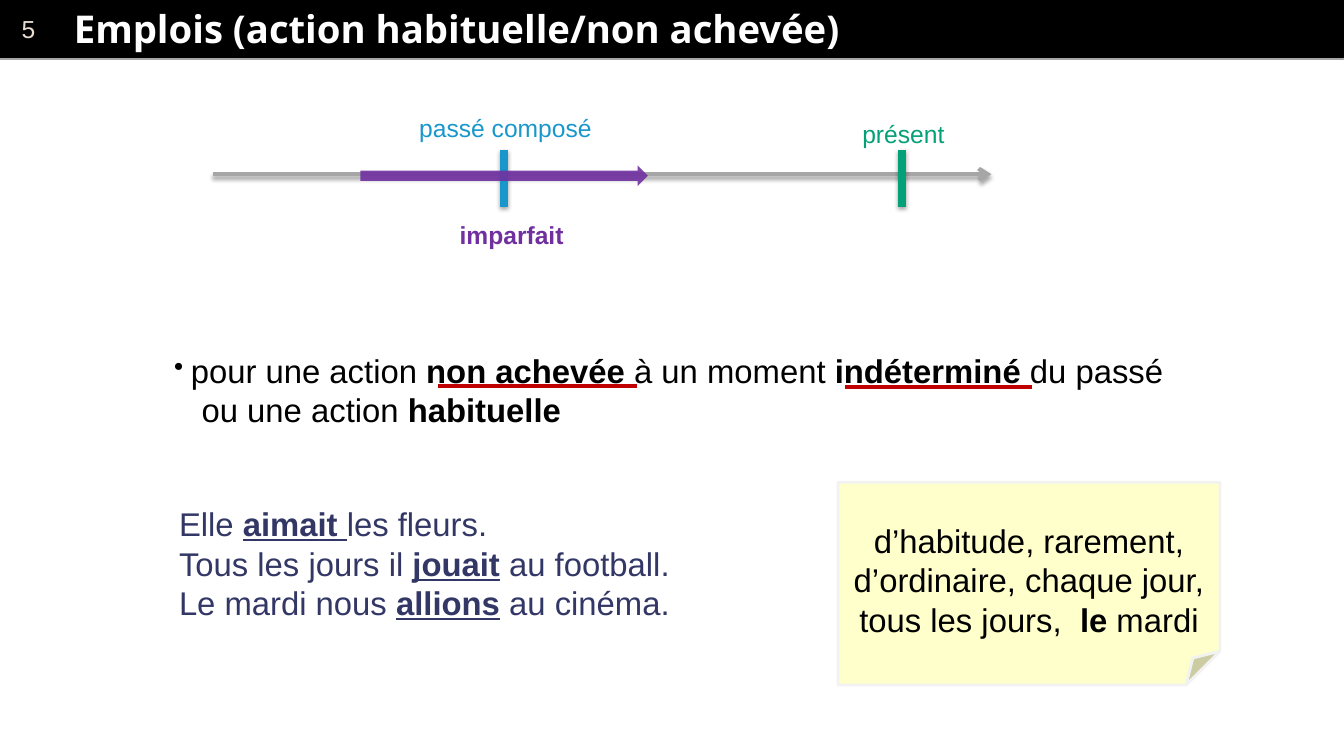
from lxml.etree import SubElement
from pptx import Presentation
from pptx.dml.color import RGBColor
from pptx.enum.shapes import MSO_CONNECTOR, MSO_SHAPE
from pptx.enum.text import MSO_ANCHOR, PP_ALIGN
from pptx.oxml.ns import qn
from pptx.util import Inches, Pt

BLACK = RGBColor(0x00, 0x00, 0x00)
WHITE = RGBColor(0xFF, 0xFF, 0xFF)
GRAY = RGBColor(0xA6, 0xA6, 0xA6)
SAND = RGBColor(0xE7, 0xDE, 0xD1)
GREEN = RGBColor(0x04, 0xA0, 0x78)
BLUE = RGBColor(0x19, 0x97, 0xCB)
PURPLE = RGBColor(0x70, 0x30, 0xA0)
RED = RGBColor(0xC0, 0x00, 0x00)
NAVY = RGBColor(0x33, 0x37, 0x66)
YELLOW = RGBColor(0xFF, 0xFF, 0xCC)
PALE = RGBColor(0xF2, 0xF2, 0xF2)

PAGE_NUMBER = [[("5", "")]]
TITLE = [[("Emplois (action habituelle/non achevée)", "b")]]
RULE = [
    [("pour une action ", ""), ("non achevée ", "b"), ("à un moment ", ""),
     ("indéterminé", "b"), (" du passé", "")],
    [("ou une action ", ""), ("habituelle", "b")],
]
EXAMPLES = [
    [("Elle ", ""), ("aimait ", "bu"), ("les fleurs.", "")],
    [("Tous les jours il ", ""), ("jouait", "bu"), (" au football.", "")],
    [("Le mardi nous ", ""), ("allions", "bu"), (" au cinéma.", "")],
]
ADVERBS = [
    [("d’habitude, rarement,", "")],
    [("d’ordinaire, chaque jour, tous les jours,  ", ""), ("le", "b"), (" mardi", "")],
]
TENSE_LABELS = [
    ("présent", "", (8.66, 1.16, 1.04, 0.4), GREEN),
    ("passé composé", "", (4.16, 1.1, 1.97, 0.4), BLUE),
    ("imparfait", "b", (4.57, 2.18, 1.27, 0.4), PURPLE),
]
TENSE_MARKS = [(9.16, GREEN), (5.12, BLUE)]
UNDERLINES = [(4.45, 6.47, 3.92), (8.58, 10.48, 3.93)]

deck = Presentation()
deck.slide_width, deck.slide_height = Inches(13.65), Inches(7.68)
page = deck.slides.add_slide(deck.slide_layouts[6])


def write(shape, lines, size, color, font="Arial", align=PP_ALIGN.LEFT,
          anchor=MSO_ANCHOR.TOP, wrap=True):
    frame = shape.text_frame
    frame.word_wrap = wrap
    frame.vertical_anchor = anchor
    for index, line in enumerate(lines):
        para = frame.add_paragraph() if index else frame.paragraphs[0]
        para.alignment = align
        for text, style in line:
            span = para.add_run()
            span.text = text
            if "b" in style:
                span.font.bold = True
            if "u" in style:
                span.font.underline = True
        para.font.name = font
        para.font.size = Pt(size)
        para.font.color.rgb = color
    return frame


def add_text(place, lines, size, color, **options):
    box = page.shapes.add_textbox(*map(Inches, place))
    return write(box, lines, size, color, **options)


def add_block(kind, place, fill, line=None, width=1):
    block = page.shapes.add_shape(kind, *map(Inches, place))
    block.shadow.inherit = False
    block.fill.solid()
    block.fill.fore_color.rgb = fill
    if line is None:
        block.line.fill.background()
    else:
        block.line.color.rgb = line
        block.line.width = Pt(width)
    return block


def add_line(x1, y1, x2, y2, color, width, shadow=False, arrow=False):
    line = page.shapes.add_connector(MSO_CONNECTOR.STRAIGHT, *map(Inches, (x1, y1, x2, y2)))
    line.line.color.rgb = color
    line.line.width = Pt(width)
    if arrow:
        SubElement(line.line._get_or_add_ln(), qn("a:tailEnd"), type="arrow")
    effects = SubElement(line._element.spPr, qn("a:effectLst"))
    if shadow:
        outer = SubElement(effects, qn("a:outerShdw"), blurRad=str(Pt(3.1)),
                           dist=str(Pt(1.8)), dir="5400000", rotWithShape="0")
        tint = SubElement(outer, qn("a:srgbClr"), val=str(BLACK))
        SubElement(tint, qn("a:alpha"), val="35000")


def indent(para, left, first=0):
    properties = para._p.get_or_add_pPr()
    properties.set("marL", str(Inches(left)))
    properties.set("indent", str(Inches(first)))
    return properties


banner = add_block(MSO_SHAPE.RECTANGLE, (0, 0, 13.65, 0.58), BLACK, BLACK, 0.75)
number = write(banner, PAGE_NUMBER, 18, SAND, anchor=MSO_ANCHOR.MIDDLE)
indent(number.paragraphs[0], 0.12)
add_line(0, 0.6, 13.65, 0.6, GRAY, 2)
title = add_text((0.61, 0.01, 12.85, 0.56), TITLE, 28, WHITE, font="Open Sans",
                 anchor=MSO_ANCHOR.MIDDLE)
title.margin_left = Inches(0.14)
title.margin_top = title.margin_bottom = Inches(0.04)

add_line(2.16, 1.77, 10.07, 1.77, GRAY, 3, shadow=True, arrow=True)
for x, color in TENSE_MARKS:
    add_line(x, 1.52, x, 2.1, color, 6, shadow=True)
duration = add_block(MSO_SHAPE.RIGHT_ARROW, (3.66, 1.68, 2.92, 0.21), PURPLE)
for tint in duration._element.spPr.find(qn("a:solidFill")):
    SubElement(tint, qn("a:alpha"), val="90000")
for text, style, place, color in TENSE_LABELS:
    add_text(place, [[(text, style)]], 18, color, wrap=False)

rule = add_text((1.67, 3.51, 11.8, 0.91), RULE, 24, BLACK)
first, second = rule.paragraphs
bulleted = indent(first, 0.17, -0.17)
bullet = SubElement(bulleted, qn("a:buChar"), char="•")
bullet_size = SubElement(bulleted, qn("a:buSzPct"), val="83000")
bulleted.insert(0, bullet)
bulleted.insert(0, bullet_size)
indent(second, 0.28)
for x1, x2, y in UNDERLINES:
    add_line(x1, y, x2, y, RED, 3)

note = add_block(MSO_SHAPE.FOLDED_CORNER, (8.51, 4.9, 3.88, 2.06), YELLOW, PALE, 2)
adverbs = write(note, ADVERBS, 24, BLACK, align=PP_ALIGN.CENTER, anchor=MSO_ANCHOR.MIDDLE)
adverbs.margin_top = Inches(0.31)
add_text((1.72, 5.07, 6.84, 1.31), EXAMPLES, 24, NAVY)

deck.save("out.pptx")
